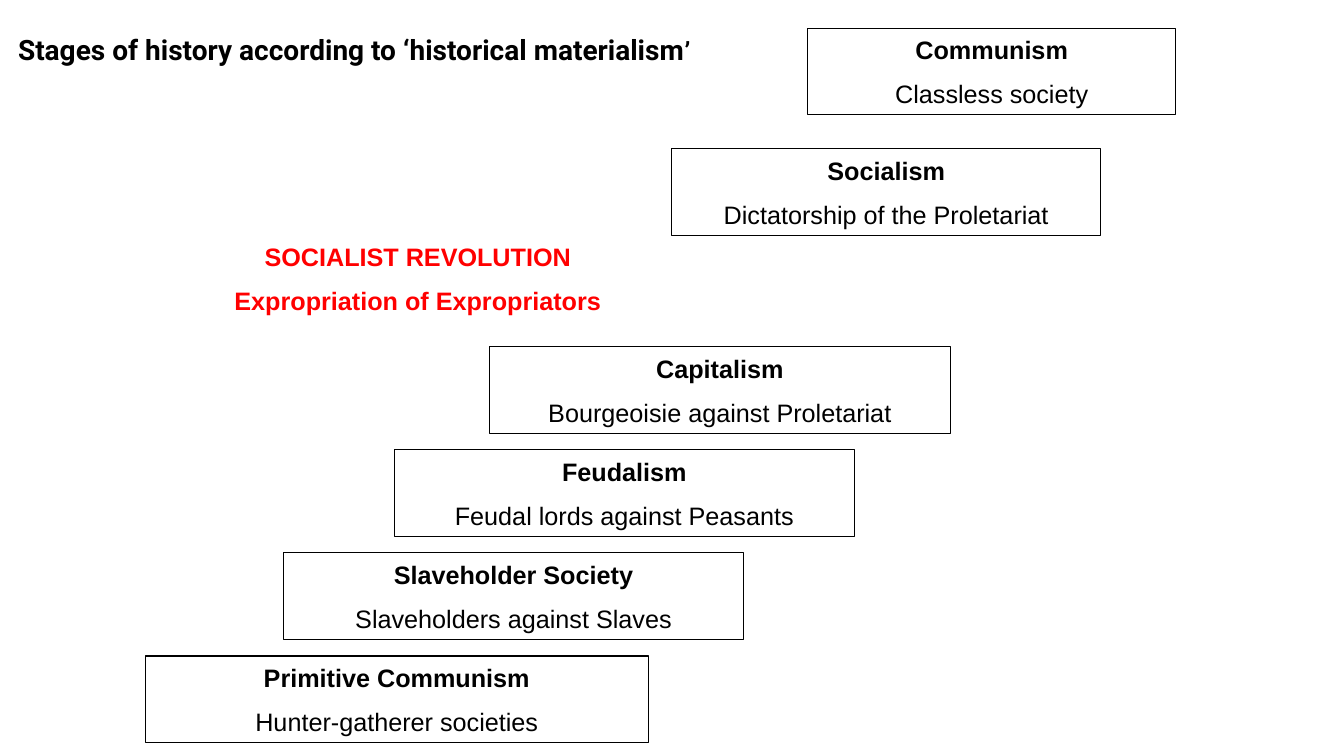
from typing import NamedTuple

from pptx import Presentation
from pptx.dml.color import RGBColor
from pptx.enum.shapes import MSO_SHAPE
from pptx.enum.text import MSO_ANCHOR, PP_ALIGN
from pptx.slide import Slide
from pptx.text.text import TextFrame
from pptx.util import Pt

BLACK = RGBColor(0x00, 0x00, 0x00)
RED = RGBColor(0xFF, 0x00, 0x00)

LOWEST_TOP = 468.6
STEP_RISE = 73.6
BOX_HEIGHT = 61.8


class Stage(NamedTuple):
    name: str
    detail: str
    left: float
    top: float
    width: float


CLASS_STEPS = [
    ("Primitive Communism", "Hunter-gatherer societies", 103.7, 359.5),
    ("Slaveholder Society", "Slaveholders against Slaves", 202.3, 329),
    ("Feudalism", "Feudal lords against Peasants", 281.5, 329),
    ("Capitalism", "Bourgeoisie against Proletariat", 349.7, 329),
]
STAGES = [
    Stage(name, detail, left, LOWEST_TOP - step * STEP_RISE, width)
    for step, (name, detail, left, width) in enumerate(CLASS_STEPS)
] + [
    Stage("Socialism", "Dictatorship of the Proletariat", 480, 106.4, 306),
    Stage("Communism", "Classless society", 577, 20.2, 262.8),
]
REVOLUTION = Stage(
    "SOCIALIST REVOLUTION", "Expropriation of Expropriators", 134, 167.8, 329
)


def write_stage(frame: TextFrame, stage: Stage, color: RGBColor, bold_detail: bool) -> None:
    frame.word_wrap = True
    frame.vertical_anchor = MSO_ANCHOR.MIDDLE
    frame.text = f"{stage.name}\n{stage.detail}"
    name, detail = frame.paragraphs
    for para, bold in ((name, True), (detail, bold_detail)):
        para.alignment = PP_ALIGN.CENTER
        para.font.name = "Arial"
        para.font.size = Pt(18)
        para.font.bold = bold
        para.font.color.rgb = color
    detail.space_before = Pt(10)


def add_stage(page: Slide, stage: Stage) -> None:
    box = page.shapes.add_shape(
        MSO_SHAPE.RECTANGLE,
        Pt(stage.left), Pt(stage.top), Pt(stage.width), Pt(BOX_HEIGHT),
    )
    box.shadow.inherit = False
    box.fill.background()
    box.line.color.rgb = BLACK
    box.line.width = Pt(0.75)
    write_stage(box.text_frame, stage, BLACK, bold_detail=False)


def add_revolution(page: Slide) -> None:
    box = page.shapes.add_textbox(
        Pt(REVOLUTION.left), Pt(REVOLUTION.top), Pt(REVOLUTION.width), Pt(BOX_HEIGHT)
    )
    write_stage(box.text_frame, REVOLUTION, RED, bold_detail=True)


def add_title(page: Slide) -> None:
    box = page.shapes.add_textbox(Pt(5.8), Pt(19.4), Pt(525), Pt(31.7))
    box.text_frame.word_wrap = True
    para = box.text_frame.paragraphs[0]
    para.font.name = "Roboto"
    para.font.bold = True
    para.font.color.rgb = BLACK
    for text, size in (
        ("Stages of history according to ‘historical materialism", 20),
        ("’", 18),
    ):
        span = para.add_run()
        span.text = text
        span.font.size = Pt(size)


def main() -> None:
    deck = Presentation()
    deck.slide_width = Pt(960)
    deck.slide_height = Pt(540)
    page = deck.slides.add_slide(deck.slide_layouts[6])
    for stage in STAGES:
        add_stage(page, stage)
    add_revolution(page)
    add_title(page)
    deck.save("out.pptx")


if __name__ == "__main__":
    main()
